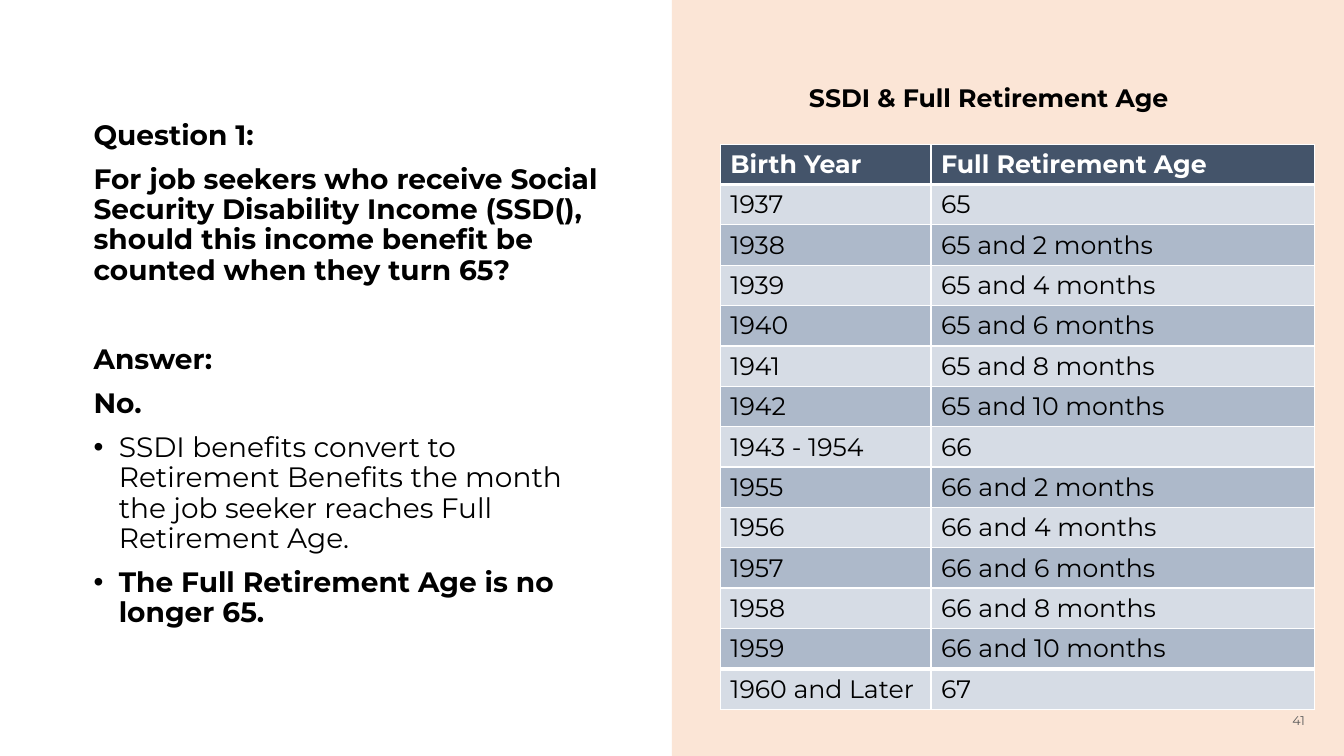
import pptx
import pptx.dml.color
import pptx.enum.shapes
import pptx.enum.text
import pptx.oxml
import pptx.oxml.ns
import pptx.util
from lxml import etree

RGBColor = pptx.dml.color.RGBColor
Inches = pptx.util.Inches
Pt = pptx.util.Pt
PP_ALIGN = pptx.enum.text.PP_ALIGN
MSO_ANCHOR = pptx.enum.text.MSO_ANCHOR

WHITE = RGBColor(0xFF, 0xFF, 0xFF)
BLACK = RGBColor(0, 0, 0)
GRAY = RGBColor(0x59, 0x59, 0x59)
PEACH = RGBColor(0xFB, 0xE5, 0xD6)
SLATE = RGBColor(0x44, 0x54, 0x6A)
BAND_LIGHT = RGBColor(0xD6, 0xDC, 0xE5)
BAND_DARK = RGBColor(0xAD, 0xB9, 0xCA)
FONT = "Montserrat"

SLIDE_W, SLIDE_H = 13.33, 7.5
HALF_W = SLIDE_W / 2

# Text, bold, bulleted, space before in points
QUESTION_AND_ANSWER = [
    ("Question 1:", True, False, 0),
    ("For job seekers who receive Social Security Disability Income (SSD(), "
     "should this income benefit be counted when they turn 65?", True, False, 10),
    ("Answer:", True, False, 42),
    ("No.", True, False, 10),
    ("SSDI benefits convert to Retirement Benefits the month the job seeker "
     "reaches Full Retirement Age.", False, True, 10),
    ("The Full Retirement Age is no longer 65.", True, True, 10),
]

RETIREMENT_AGES = [
    ("Birth Year", "Full Retirement Age"),
    ("1937", "65"),
    ("1938", "65 and 2 months"),
    ("1939", "65 and 4 months"),
    ("1940", "65 and 6 months"),
    ("1941", "65 and 8 months"),
    ("1942", "65 and 10 months"),
    ("1943 - 1954", "66"),
    ("1955", "66 and 2 months"),
    ("1956", "66 and 4 months"),
    ("1957", "66 and 6 months"),
    ("1958", "66 and 8 months"),
    ("1959", "66 and 10 months"),
    ("1960 and Later", "67"),
]


def add_run(paragraph, text, size, color=BLACK, bold=False):
    run = paragraph.add_run()
    run.text = text
    run.font.name = FONT
    run.font.size = Pt(size)
    run.font.bold = bold
    run.font.color.rgb = color


def add_text_frame(slide, box, anchor=MSO_ANCHOR.TOP):
    frame = slide.shapes.add_textbox(*map(Inches, box)).text_frame
    frame.word_wrap = True
    frame.vertical_anchor = anchor
    return frame


def add_bullet(paragraph):
    properties = paragraph._p.get_or_add_pPr()
    properties.set("marL", str(Inches(0.25)))
    properties.set("indent", str(-Inches(0.25)))
    font = etree.SubElement(properties, pptx.oxml.ns.qn("a:buFont"))
    font.set("typeface", "Arial")
    bullet = etree.SubElement(properties, pptx.oxml.ns.qn("a:buChar"))
    bullet.set("char", "•")


def set_border(cell, edge, width):
    properties = cell._tc.get_or_add_tcPr()
    line = etree.SubElement(properties, pptx.oxml.ns.qn("a:ln" + edge))
    line.set("w", str(Pt(width)))
    fill = etree.SubElement(line, pptx.oxml.ns.qn("a:solidFill"))
    color = etree.SubElement(fill, pptx.oxml.ns.qn("a:srgbClr"))
    color.set("val", str(WHITE))


def add_question_panel(slide, box):
    left, top, width, height = box
    frame = add_text_frame(
        slide, (left + 0.83, top + 0.93, width - 1.41, height - 1.92), MSO_ANCHOR.MIDDLE)
    for index, (text, bold, bulleted, space) in enumerate(QUESTION_AND_ANSWER):
        paragraph = frame.add_paragraph() if index else frame.paragraphs[0]
        paragraph.line_spacing = 0.9
        paragraph.space_before = Pt(space)
        if bulleted:
            add_bullet(paragraph)
        add_run(paragraph, text, 20, bold=bold)


def add_age_table(slide, box):
    last = len(RETIREMENT_AGES) - 1
    table = slide.shapes.add_table(last + 1, 2, *map(Inches, box)).table
    table.horz_banding = False
    table.columns[0].width = Inches(2.09)
    table.columns[1].width = Inches(box[2] - 2.09)
    for row, values in enumerate(RETIREMENT_AGES):
        header = row == 0
        fill = SLATE if header else (BAND_LIGHT if row % 2 else BAND_DARK)
        # Thick rules set off the header and the last row
        top_width = 3 if row in (1, last) else 1
        bottom_width = 3 if row in (0, last - 1) else 1
        for column, value in enumerate(values):
            cell = table.cell(row, column)
            for edge, width in zip("LRTB", (1, 1, top_width, bottom_width)):
                set_border(cell, edge, width)
            cell.fill.solid()
            cell.fill.fore_color.rgb = fill
            add_run(cell.text_frame.paragraphs[0], value, 18,
                    WHITE if header else BLACK, header)


def add_retirement_panel(slide, box):
    left, top, width, height = box
    # Tinted half
    panel = slide.shapes.add_shape(
        pptx.enum.shapes.MSO_SHAPE.RECTANGLE, *map(Inches, box))
    panel.shadow.inherit = False
    panel.fill.solid()
    panel.fill.fore_color.rgb = PEACH
    panel.line.fill.background()
    # Slide number
    number = add_text_frame(
        slide, (left + width - 3.29, top + height - 0.55, 3, 0.4), MSO_ANCHOR.MIDDLE)
    number.paragraphs[0].alignment = PP_ALIGN.RIGHT
    number.paragraphs[0].space_after = Pt(6)
    add_run(number.paragraphs[0], "41", 9, GRAY)
    # Table and its heading
    add_age_table(slide, (left + 0.48, top + 1.43, 5.89, 5.6))
    heading = add_text_frame(slide, (left + 1.26, top + 0.77, width - 1.5, 0.4))
    add_run(heading.paragraphs[0], "SSDI & Full Retirement Age", 18, bold=True)


def main():
    deck = pptx.Presentation()
    deck.slide_width, deck.slide_height = Inches(SLIDE_W), Inches(SLIDE_H)
    slide = deck.slides.add_slide(deck.slide_layouts[6])
    add_question_panel(slide, (0, 0, HALF_W, SLIDE_H))
    add_retirement_panel(slide, (HALF_W, 0, HALF_W, SLIDE_H))
    deck.save("out.pptx")


if __name__ == "__main__":
    main()
